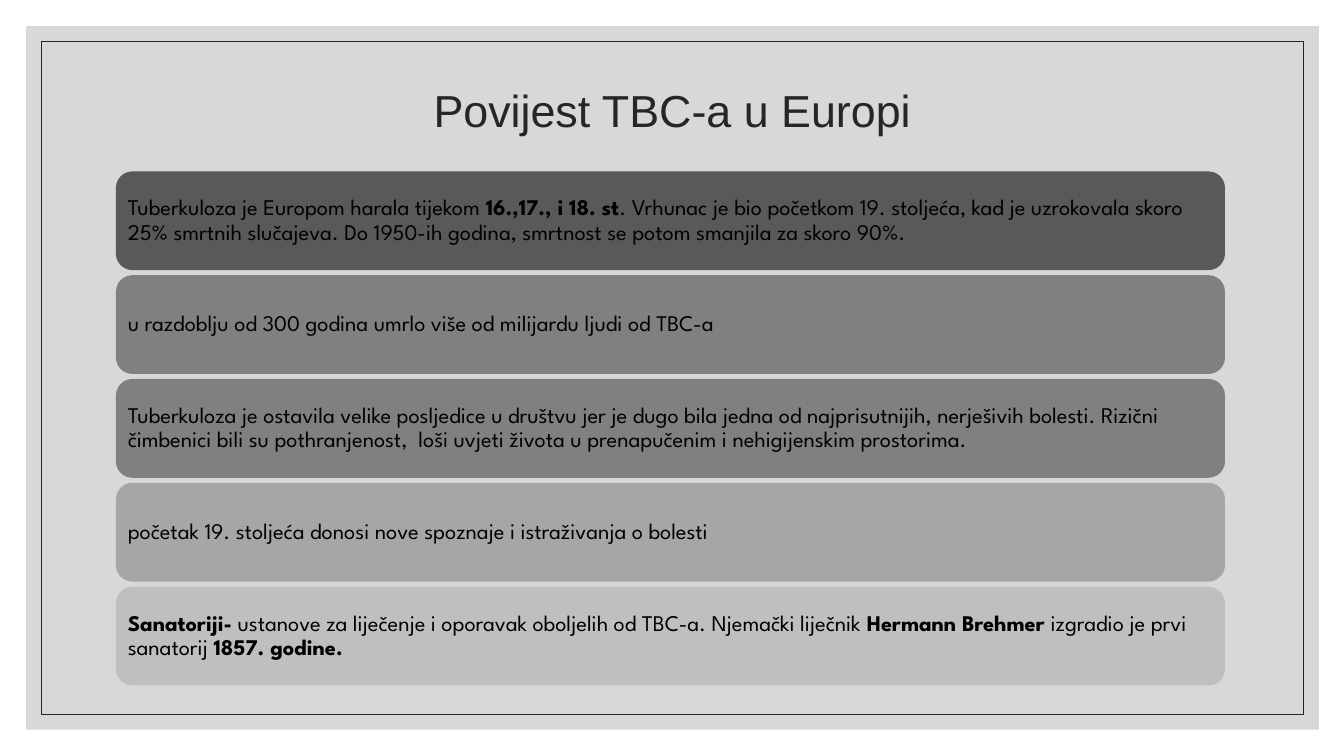
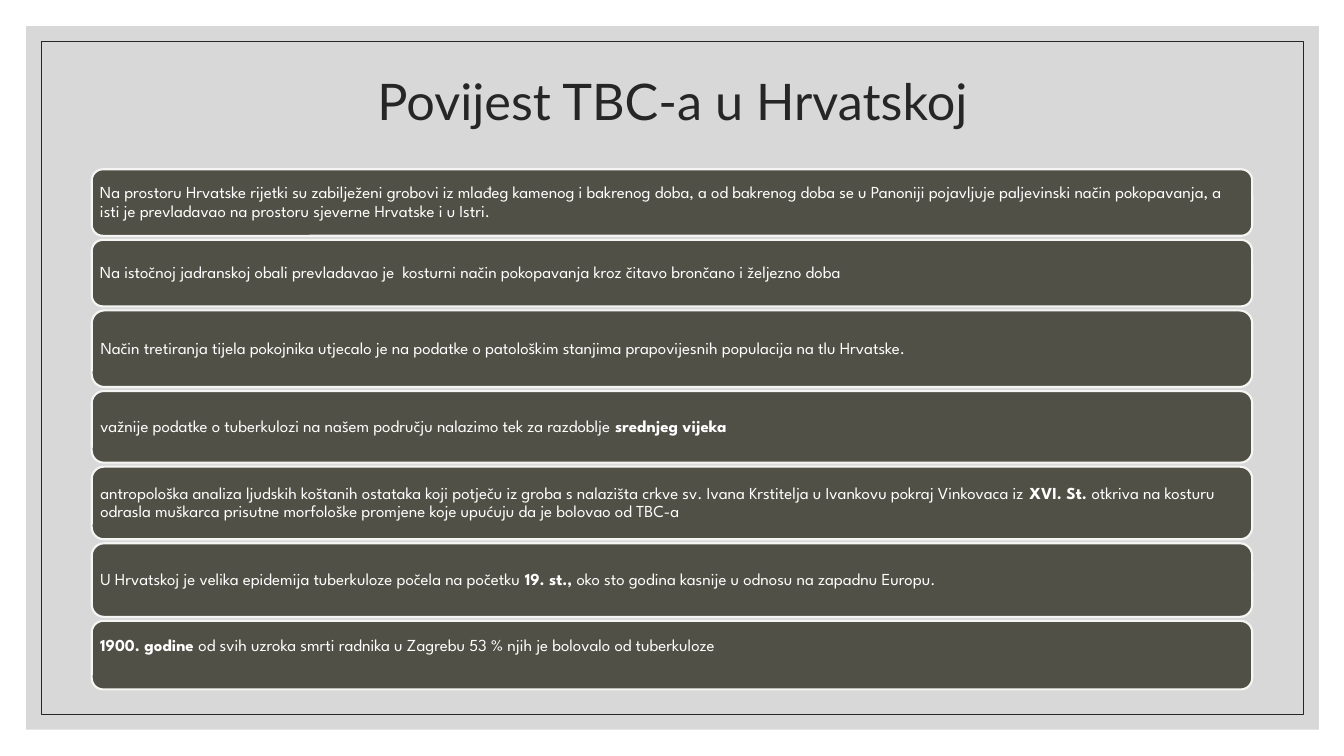
from dataclasses import dataclass

from pptx import Presentation
from pptx.dml.color import RGBColor
from pptx.enum.shapes import MSO_SHAPE
from pptx.enum.text import MSO_ANCHOR, MSO_AUTO_SIZE, PP_ALIGN
from pptx.oxml.ns import qn
from pptx.util import Inches, Pt
from lxml.etree import SubElement


@dataclass(frozen=True)
class Theme:
    """Colours, type sizes and spacing shared by the slides."""
    panel: str = "BFBFBF"
    panel_alpha: int = 60
    ink: str = "262626"
    black: str = "000000"
    white: str = "FFFFFF"
    olive: str = "505046"
    outline: str = "F5F6F4"
    body_font: str = "League Spartan"
    line_spacing: float = 0.9


@dataclass(frozen=True)
class BarStyle:
    """Placement and look of one stack of bars."""
    left: float
    top: float
    width: float
    gap: float
    inset: float
    size: int
    color: str
    outline: str | None = None


THEME = Theme()

EUROPE_STYLE = BarStyle(1.15, 1.7, 11, 0.05, 0.07, 16, THEME.black)
CROATIA_STYLE = BarStyle(0.91, 1.68, 11.51, 0.04, 0.05, 12, THEME.white, THEME.outline)

EUROPE_HEIGHT = 0.98
EUROPE_BARS = [
    ("595959", "Tuberkuloza je Europom harala tijekom *16.,17., i 18. st*. Vrhunac je bio početkom "
     "19. stoljeća, kad je uzrokovala skoro 25% smrtnih slučajeva. Do 1950-ih godina, smrtnost se "
     "potom smanjila za skoro 90%."),
    ("808080", "u razdoblju od 300 godina umrlo više od milijardu ljudi od TBC-a"),
    ("808080", "Tuberkuloza je ostavila velike posljedice u društvu jer je dugo bila jedna od "
     "najprisutnijih, nerješivih bolesti. Rizični čimbenici bili su pothranjenost,  loši uvjeti "
     "života u prenapučenim i nehigijenskim prostorima."),
    ("A6A6A6", "početak 19. stoljeća donosi nove spoznaje i istraživanja o bolesti"),
    ("BFBFBF", "*Sanatoriji-* ustanove za liječenje i oporavak oboljelih od TBC-a. Njemački liječnik "
     "*Hermann Brehmer *izgradio je prvi sanatorij *1857. godine.*"),
]

CROATIA_BARS = [
    (0.66, "Na prostoru Hrvatske rijetki su zabilježeni grobovi iz mlađeg kamenog i bakrenog doba, a "
     "od bakrenog doba se u Panoniji pojavljuje paljevinski način pokopavanja, a isti je prevladavao "
     "na prostoru sjeverne Hrvatske i u Istri."),
    (0.66, "Na istočnoj jadranskoj obali prevladavao je  kosturni način pokopavanja kroz čitavo "
     "brončano i željezno doba"),
    (0.76, "Način tretiranja tijela pokojnika utjecalo je na podatke o patološkim stanjima "
     "prapovijesnih populacija na tlu Hrvatske."),
    (0.71, "važnije podatke o tuberkulozi na našem području nalazimo tek za razdoblje "
     "*srednjeg vijeka*"),
    (0.72, "antropološka analiza ljudskih koštanih ostataka koji potječu iz groba s nalazišta crkve "
     "sv. Ivana Krstitelja u Ivankovu pokraj Vinkovaca iz *XVI. St. *otkriva na kosturu odrasla "
     "muškarca prisutne morfološke promjene koje upućuju da je bolovao od TBC-a"),
    (0.73, "U Hrvatskoj je velika epidemija tuberkuloze počela na početku *19. st.,* oko sto godina "
     "kasnije u odnosu na zapadnu Europu."),
    (0.68, "*1900. godine *od svih uzroka smrti radnika u Zagrebu 53 % njih je bolovalo od "
     "tuberkuloze"),
]
LAST_BAR_LIFT = 0.18


def set_all(target, values):
    """Set every attribute named in a dict."""
    for name, value in values.items():
        setattr(target, name, value)


def add_box(page, kind, area, fill=None, line=None, line_width=1.0):
    """Add a preset shape without shadow and return it."""
    box = page.shapes.add_shape(kind, *map(Inches, area))
    box.shadow.inherit = False
    if fill:
        box.fill.solid()
        box.fill.fore_color.rgb = RGBColor.from_string(fill)
    else:
        box.fill.background()
    if line:
        box.line.color.rgb = RGBColor.from_string(line)
        box.line.width = Pt(line_width)
    else:
        box.line.fill.background()
    return box


def write_text(box, text, font, size, color, align):
    """Write one paragraph, with the parts between asterisks in bold."""
    para = box.text_frame.paragraphs[0]
    set_all(para, {"alignment": align, "line_spacing": THEME.line_spacing})
    for index, part in enumerate(text.split("*")):
        if part:
            span = para.add_run()
            span.text = part
            set_all(span.font, {"name": font, "size": Pt(size), "bold": index % 2 == 1})
            span.font.color.rgb = RGBColor.from_string(color)


def add_frame(page):
    """Draw the grey panel and thin border, and move them to the layout."""
    panel = add_box(page, MSO_SHAPE.RECTANGLE, (0.26, 0.26, 12.82, 6.98), THEME.panel)
    color = panel.element.find(".//" + qn("a:solidFill") + "/" + qn("a:srgbClr"))
    SubElement(color, qn("a:alpha"), val=str(THEME.panel_alpha * 1000))
    border = add_box(page, MSO_SHAPE.RECTANGLE, (0.41, 0.41, 12.52, 6.68),
                     line=THEME.ink, line_width=0.5)
    for box in (panel, border):
        page.slide_layout.shapes.element.append(box.element)


def add_title(page, text, font, size, height):
    """Place and format the title placeholder."""
    title = page.shapes.title
    set_all(title, {"left": Inches(1.17), "top": Inches(0.7),
                    "width": Inches(11), "height": Inches(height)})
    set_all(title.text_frame, {"word_wrap": True, "auto_size": MSO_AUTO_SIZE.NONE,
                               "vertical_anchor": MSO_ANCHOR.MIDDLE})
    write_text(title, text, font, size, THEME.ink, PP_ALIGN.CENTER)


def add_bars(page, style, bars):
    """Stack rounded bars given as height, fill and text; return them."""
    top = style.top
    boxes = []
    for height, fill, text in bars:
        box = add_box(page, MSO_SHAPE.ROUNDED_RECTANGLE, (style.left, top, style.width, height),
                      fill, style.outline, 1.5)
        inset = Inches(style.inset)
        set_all(box.text_frame, {"word_wrap": True, "vertical_anchor": MSO_ANCHOR.MIDDLE,
                                 "margin_left": inset, "margin_right": inset,
                                 "margin_top": inset, "margin_bottom": inset})
        write_text(box, text, THEME.body_font, style.size, style.color, PP_ALIGN.LEFT)
        boxes.append(box)
        top += height + style.gap
    return boxes


def main():
    """Build and save the deck."""
    deck = Presentation()
    set_all(deck, {"slide_width": Inches(13.33), "slide_height": Inches(7.5)})
    layout = deck.slide_layouts.get_by_name("Title Only")

    europe = deck.slides.add_slide(layout)
    add_frame(europe)
    add_title(europe, "Povijest TBC-a u Europi", "Arial", 32, 0.85)
    add_bars(europe, EUROPE_STYLE, [(EUROPE_HEIGHT, fill, text) for fill, text in EUROPE_BARS])

    croatia = deck.slides.add_slide(layout)
    add_title(croatia, "Povijest TBC-a u Hrvatskoj", "Lato", 36, 0.66)
    boxes = add_bars(croatia, CROATIA_STYLE,
                     [(height, THEME.olive, text) for height, text in CROATIA_BARS])
    boxes[-1].text_frame.margin_bottom += Inches(LAST_BAR_LIFT)

    deck.save("out.pptx")


if __name__ == "__main__":
    main()
